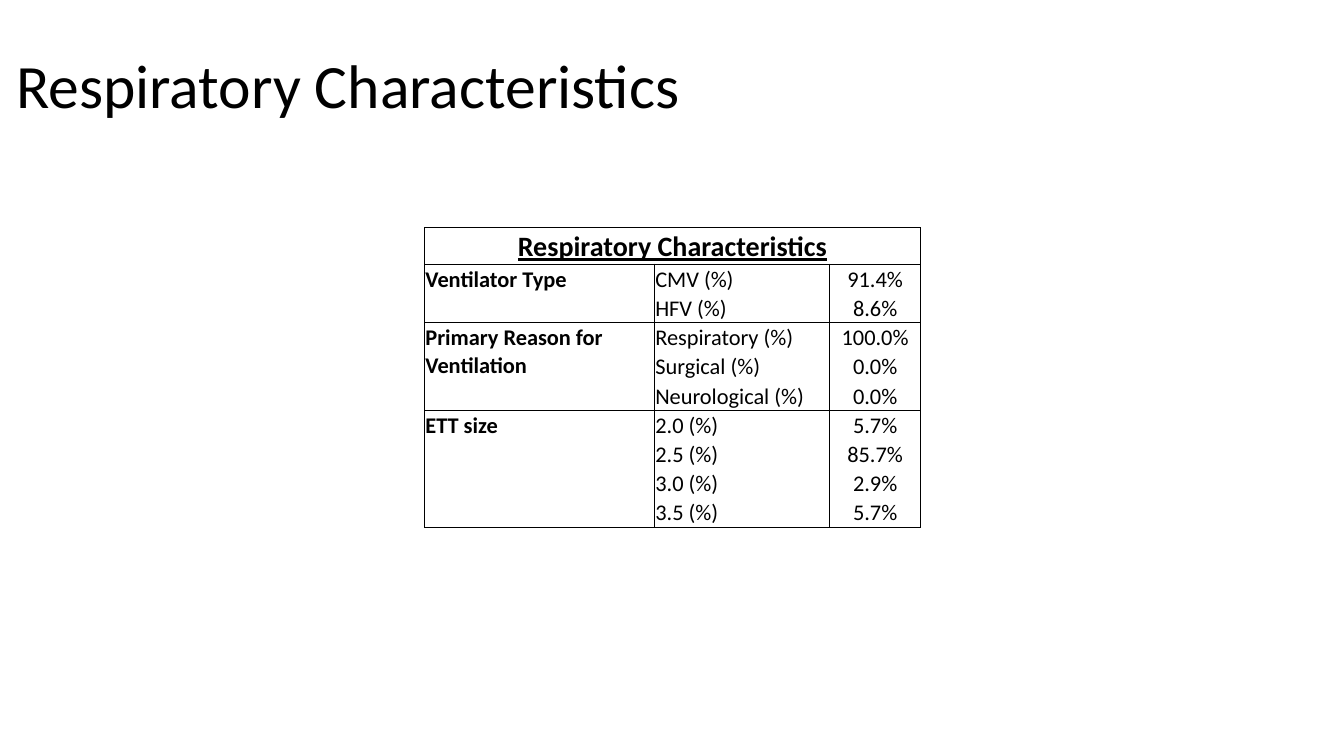
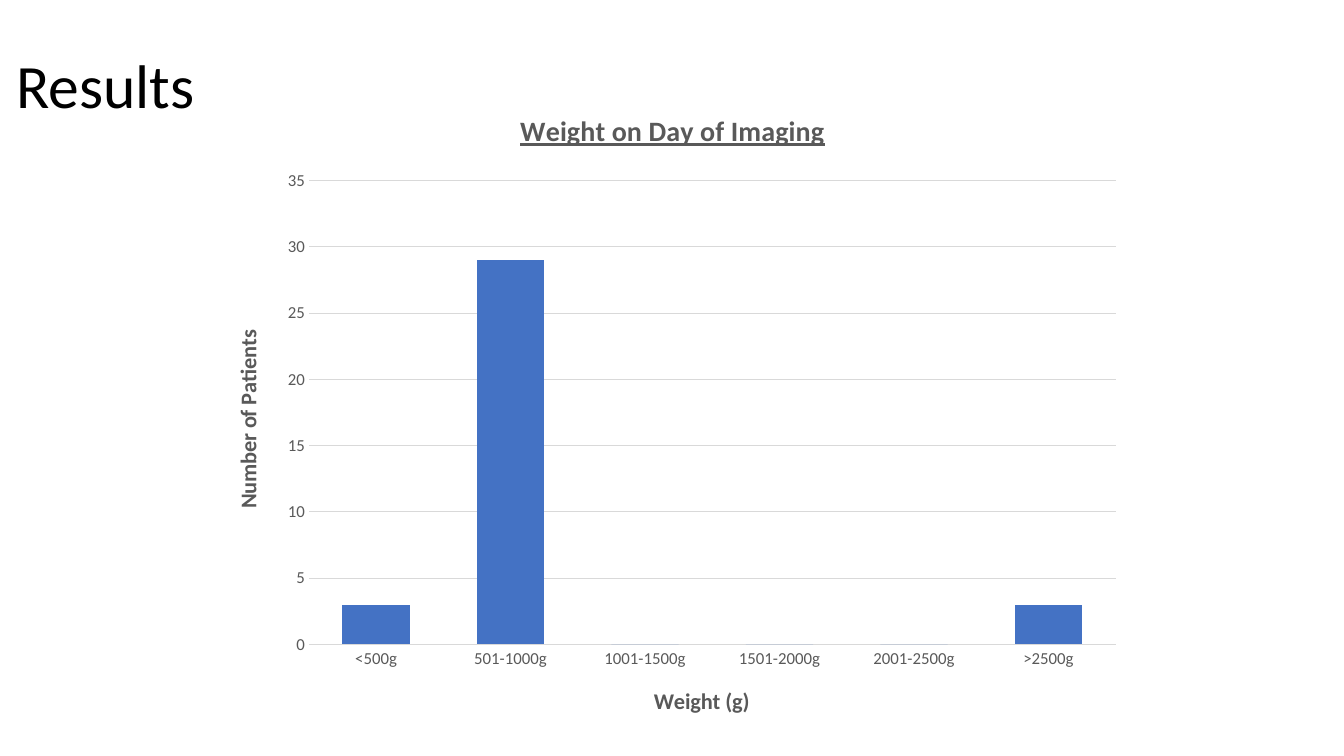
from pptx import Presentation
from pptx.chart import data as cd
from pptx.dml import color as col
from pptx.enum import chart as ch, text as tx
from pptx.oxml import ns
from pptx.util import Inches, Pt
from lxml import etree

FONT, BLACK, GREY, PALE, BLUE = "Calibri", "000000", "595959", "D9D9D9", "4472C4"
LEFT, MID = tx.PP_ALIGN.LEFT, tx.PP_ALIGN.CENTER


def rgb(code):
    return col.RGBColor.from_string(code)


def write(frame, text, size=16, color=BLACK, bold=False, line=None, align=LEFT, space=None):
    para = frame.paragraphs[0]
    para.alignment, para.line_spacing = align, space
    run = para.add_run()
    run.text = text
    font = run.font
    font.name, font.size, font.bold, font.underline = FONT, Pt(size), bold, line
    font.color.rgb = rgb(color)


prs = Presentation()
prs.slide_width, prs.slide_height = Inches(13.33), Inches(7.5)

# Slides with their titles
pages = []
for name in ("Respiratory Characteristics", "Results"):
    page = prs.slides.add_slide(prs.slide_layouts[5])
    head = page.shapes.title
    head.left, head.top = Inches(0.06), Inches(0.15)
    head.width, head.height = Inches(11.5), Inches(1.45)
    head.text_frame.vertical_anchor = tx.MSO_ANCHOR.MIDDLE
    write(head.text_frame, name, size=44, space=0.9)
    pages.append(page)

# Table: groups of rows, each under one label
groups = [
    ("Ventilator Type", [("CMV (%)", "91.4%"), ("HFV (%)", "8.6%")]),
    ("Primary Reason for Ventilation",
     [("Respiratory (%)", "100.0%"), ("Surgical (%)", "0.0%"), ("Neurological (%)", "0.0%")]),
    ("ETT size",
     [("2.0 (%)", "5.7%"), ("2.5 (%)", "85.7%"), ("3.0 (%)", "2.9%"), ("3.5 (%)", "5.7%")]),
]
count = 1 + sum(len(rows) for _, rows in groups)
table = pages[0].shapes.add_table(
    count, 3, Inches(4.21), Inches(2.26), Inches(4.92), Inches(2.99)).table
table.first_row = table.horz_banding = False
for part, width in zip(table.columns, (2.28, 1.74, 0.9)):
    part.width = Inches(width)
for i, part in enumerate(table.rows):
    part.height = Inches(0.29 if i else 0.36)

# Rules between groups only
firsts = {0, 1}
for _, rows in groups:
    firsts.add(max(firsts) + len(rows))
for r in range(count):
    for c in range(3):
        cell = table.cell(r, c)
        cell.fill.background()
        cell.vertical_anchor = tx.MSO_ANCHOR.BOTTOM
        cell.margin_left = cell.margin_right = cell.margin_top = Inches(0.01)
        cell.margin_bottom = 0
        props = cell._tc.get_or_add_tcPr()
        shown = {"L": True, "R": True, "T": c == 0 or r in firsts, "B": c == 0 or r + 1 in firsts}
        for i, (side, on) in enumerate(shown.items()):
            edge = etree.Element(ns.qn("a:ln" + side), w=str(Pt(0.5)))
            fill = etree.SubElement(edge, ns.qn("a:solidFill" if on else "a:noFill"))
            if on:
                etree.SubElement(fill, ns.qn("a:srgbClr"), val=BLACK)
            props.insert(i, edge)

# Table text
table.cell(0, 0).merge(table.cell(0, 2))
write(table.cell(0, 0).text_frame, "Respiratory Characteristics",
      size=20, bold=True, line=True, align=MID)
r = 1
for label, rows in groups:
    cell = table.cell(r, 0)
    cell.merge(table.cell(r + len(rows) - 1, 0))
    cell.vertical_anchor, cell.margin_top = tx.MSO_ANCHOR.TOP, Inches(0.02)
    write(cell.text_frame, label, bold=True)
    for item, share in rows:
        write(table.cell(r, 1).text_frame, item)
        write(table.cell(r, 2).text_frame, share, align=MID)
        r += 1

# Chart
data = cd.CategoryChartData()
data.categories = ["<500g", "501-1000g", "1001-1500g", "1501-2000g", "2001-2500g", ">2500g"]
data.add_series("Series 1", (3, 29, 0, 0, 0, 3))
chart = pages[1].shapes.add_chart(
    ch.XL_CHART_TYPE.COLUMN_CLUSTERED, Inches(2.09), Inches(0.87),
    Inches(9.16), Inches(6.46), data).chart
chart.has_legend = False
chart.font.name, chart.font.size = FONT, Pt(10)
chart.has_title = True
chart.chart_title.include_in_layout = False
write(chart.chart_title.text_frame, "Weight on Day of Imaging",
      size=20, color=GREY, bold=True, line=True, align=MID)
plot = chart.plots[0]
plot.gap_width, plot.overlap, plot.vary_by_categories = 100, -27, False
bars = plot.series[0].format.fill
bars.solid()
bars.fore_color.rgb = rgb(BLUE)

# Axes
across, up = chart.category_axis, chart.value_axis
for axis, name in ((across, "Weight (g)"), (up, "Number of Patients")):
    axis.major_tick_mark = axis.minor_tick_mark = ch.XL_TICK_MARK.NONE
    font = axis.tick_labels.font
    font.name, font.size, font.color.rgb = FONT, Pt(12), rgb(GREY)
    write(axis.axis_title.text_frame, name, color=GREY, bold=True, align=MID)
body = up.axis_title._element.find(".//" + ns.qn("a:bodyPr"))
body.set("rot", "-5400000")
body.set("vert", "horz")
up.minimum_scale, up.maximum_scale, up.major_unit = 0, 35, 5
up.format.line.fill.background()
for line in (across.format.line, up.major_gridlines.format.line):
    line.color.rgb, line.width = rgb(PALE), Pt(0.75)

prs.save("out.pptx")
